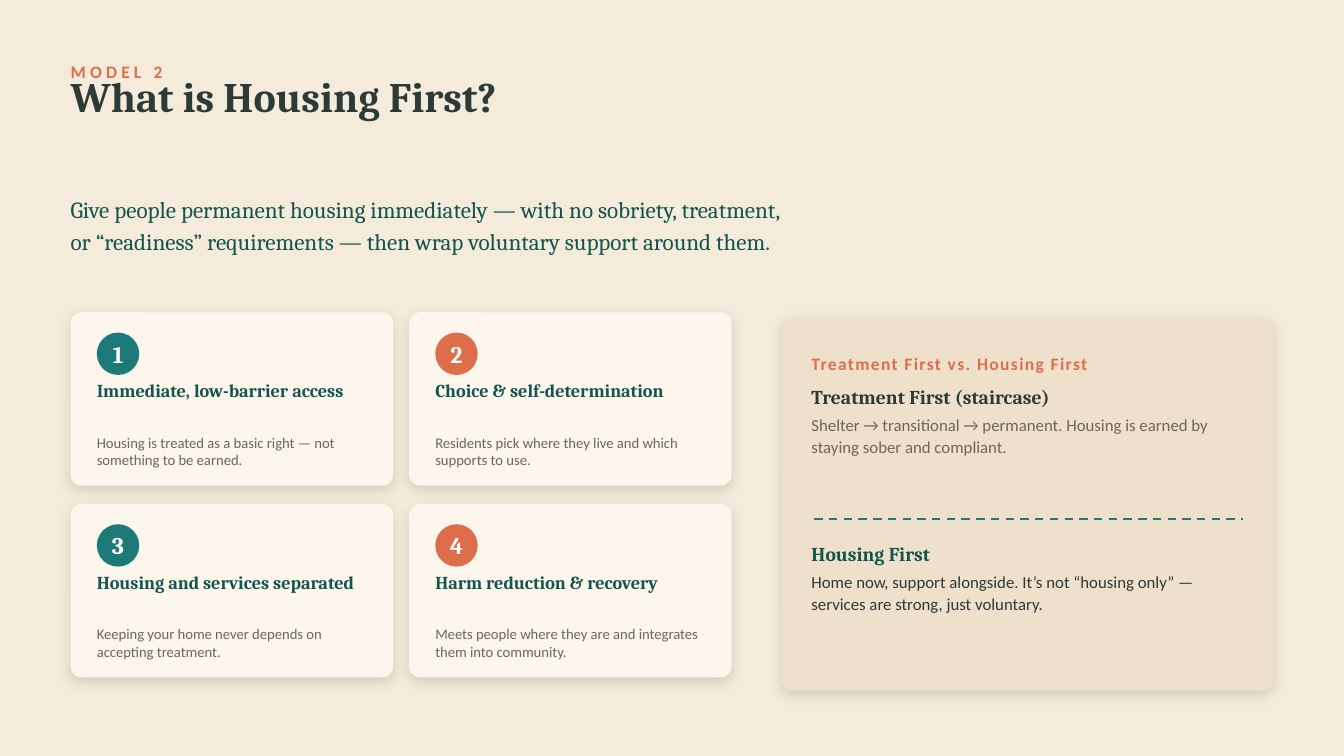
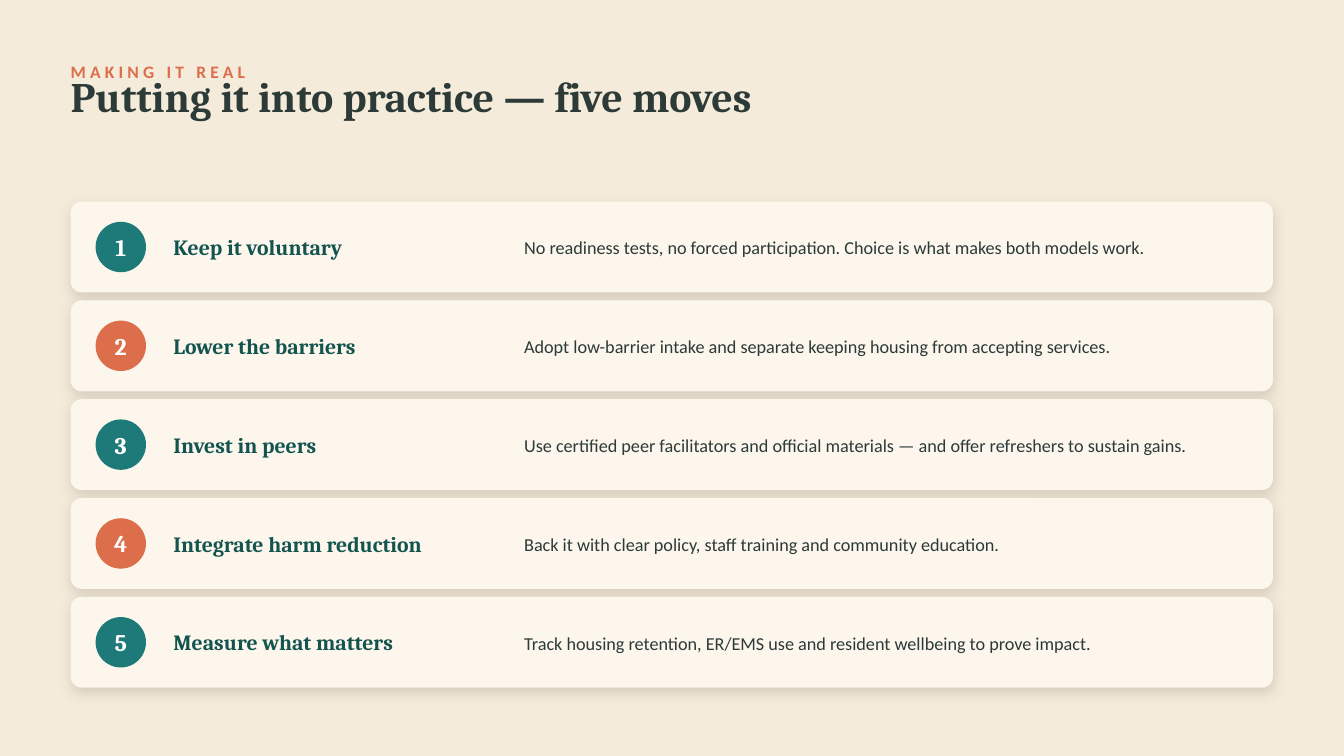
from dataclasses import dataclass

from lxml import etree
from pptx import Presentation
from pptx.dml.color import RGBColor
from pptx.enum.dml import MSO_LINE
from pptx.enum.shapes import MSO_CONNECTOR, MSO_SHAPE
from pptx.enum.text import MSO_ANCHOR, MSO_AUTO_SIZE, PP_ALIGN
from pptx.oxml.ns import qn
from pptx.util import Cm, Pt

TOP, MIDDLE = MSO_ANCHOR.TOP, MSO_ANCHOR.MIDDLE
LEFT, CENTER = PP_ALIGN.LEFT, PP_ALIGN.CENTER
ROUNDED, OVAL = MSO_SHAPE.ROUNDED_RECTANGLE, MSO_SHAPE.OVAL
STRAIGHT, DASH = MSO_CONNECTOR.STRAIGHT, MSO_LINE.DASH
TITLE_ONLY = 5

# Content
MODEL = {
    "eyebrow": "MODEL 2",
    "title": "What is Housing First?",
    "lead": "Give people permanent housing immediately — with no sobriety, treatment, "
            "or “readiness” requirements — then wrap voluntary support around them.",
    "cards": [
        ("Immediate, low-barrier access",
         "Housing is treated as a basic right — not something to be earned."),
        ("Choice & self-determination",
         "Residents pick where they live and which supports to use."),
        ("Housing and services separated",
         "Keeping your home never depends on accepting treatment."),
        ("Harm reduction & recovery",
         "Meets people where they are and integrates them into community."),
    ],
    "comparison": "Treatment First vs. Housing First",
    "staircase": ("Treatment First (staircase)",
                  "Shelter → transitional → permanent. Housing is earned by "
                  "staying sober and compliant."),
    "housing": ("Housing First",
                "Home now, support alongside. It’s not “housing only” — "
                "services are strong, just voluntary."),
}
PRACTICE = {
    "eyebrow": "MAKING IT REAL",
    "title": "Putting it into practice — five moves",
    "moves": [
        ("Keep it voluntary",
         "No readiness tests, no forced participation. Choice is what makes both models work."),
        ("Lower the barriers",
         "Adopt low-barrier intake and separate keeping housing from accepting services."),
        ("Invest in peers",
         "Use certified peer facilitators and official materials — "
         "and offer refreshers to sustain gains."),
        ("Integrate harm reduction",
         "Back it with clear policy, staff training and community education."),
        ("Measure what matters",
         "Track housing retention, ER/EMS use and resident wellbeing to prove impact."),
    ],
}


@dataclass(frozen=True)
class Theme:
    background: str = "F5EBDA"
    card: str = "FCF6EC"
    panel: str = "EFE0CB"
    ink: str = "2C3A38"
    muted: str = "6E655A"
    teal: str = "1E7A78"
    deep_teal: str = "13544F"
    coral: str = "DD6E4C"
    white: str = "FFFFFF"
    serif: str = "Cambria"
    sans: str = "Calibri"
    margin: float = 1.78
    content_width: float = 30.3
    corner: float = 0.28


THEME = Theme()


def style(name, size, color, bold=False, tracking=0, **paragraph):
    """Pair font values with paragraph values under one text style."""
    return {
        "font": {"name": name, "size": Pt(size), "bold": bold},
        "color": color,
        "tracking": tracking,
        "paragraph": {"alignment": LEFT, **paragraph},
    }


STYLES = {
    "eyebrow": style(THEME.sans, 12.5, THEME.coral, True, 3),
    "title": style(THEME.serif, 30, THEME.ink, True),
    "lead": style(THEME.serif, 16.5, THEME.deep_teal, line_spacing=1.15),
    "number": style(THEME.serif, 17, THEME.white, True, alignment=CENTER),
    "card_title": style(THEME.serif, 13, THEME.deep_teal, True, line_spacing=0.95),
    "card_body": style(THEME.sans, 10.5, THEME.muted),
    "panel_label": style(THEME.sans, 12.5, THEME.coral, True, 1),
    "staircase_title": style(THEME.serif, 14, THEME.ink, True,
                             line_spacing=1.1, space_after=Pt(3)),
    "staircase_body": style(THEME.sans, 12, THEME.muted, line_spacing=1.1),
    "housing_title": style(THEME.serif, 14, THEME.deep_teal, True,
                           line_spacing=1.1, space_after=Pt(3)),
    "housing_body": style(THEME.sans, 12, THEME.ink, line_spacing=1.1),
    "move_title": style(THEME.serif, 15.5, THEME.deep_teal, True),
    "move_body": style(THEME.sans, 13, THEME.ink, line_spacing=1.05),
}


# Shared drawing helpers
def set_attributes(target, values):
    for name, value in values.items():
        setattr(target, name, value)


def write(shape, lines, anchor=TOP):
    """Fill a shape with (text, style name) paragraphs."""
    frame = shape.text_frame
    set_attributes(frame, {
        "word_wrap": True, "auto_size": MSO_AUTO_SIZE.NONE, "vertical_anchor": anchor,
        "margin_left": 0, "margin_top": 0, "margin_right": 0, "margin_bottom": 0,
    })
    for index, (text, style_name) in enumerate(lines):
        paragraph = frame.add_paragraph() if index else frame.paragraphs[0]
        values = STYLES[style_name]
        set_attributes(paragraph, values["paragraph"])
        run = paragraph.add_run()
        run.text = text
        set_attributes(run.font, values["font"])
        run.font.color.rgb = RGBColor.from_string(values["color"])
        if values["tracking"]:
            run._r.get_or_add_rPr().set("spc", str(values["tracking"] * 100))


def add_text(slide, box, lines, anchor=TOP):
    write(slide.shapes.add_textbox(*map(Cm, box)), lines, anchor)


def add_filled(slide, kind, box, color):
    shape = slide.shapes.add_shape(kind, *map(Cm, box))
    shape.shadow.inherit = False
    shape.fill.solid()
    shape.fill.fore_color.rgb = RGBColor.from_string(color)
    shape.line.fill.background()
    return shape


def add_card(slide, box, color=THEME.card):
    """Rounded card with a soft shadow falling straight down."""
    card = add_filled(slide, ROUNDED, box, color)
    card.adjustments[0] = THEME.corner / min(box[2:])
    effects = card._element.spPr.find(qn("a:effectLst"))
    shadow = etree.SubElement(effects, qn("a:outerShdw"), {
        "blurRad": str(Pt(9)), "dist": str(Pt(3)), "dir": "5400000",
        "algn": "bl", "rotWithShape": "0",
    })
    color_element = etree.SubElement(shadow, qn("a:srgbClr"), val=THEME.muted)
    etree.SubElement(color_element, qn("a:alpha"), val="22000")


def add_badge(slide, left, top, size, number):
    color = THEME.teal if number % 2 else THEME.coral
    badge = add_filled(slide, OVAL, (left, top, size, size), color)
    write(badge, [(str(number), "number")], MIDDLE)


def add_dashed_line(slide, left, right, y):
    line = slide.shapes.add_connector(STRAIGHT, Cm(left), Cm(y), Cm(right), Cm(y))
    line.line.color.rgb = RGBColor.from_string(THEME.teal)
    set_attributes(line.line, {"width": Pt(1.5), "dash_style": DASH})
    etree.SubElement(line._element.spPr, qn("a:effectLst"))


def add_titled_slide(presentation, content):
    slide = presentation.slides.add_slide(presentation.slide_layouts[TITLE_ONLY])
    add_text(slide, (THEME.margin, 1.4, 20.32, 0.81),
             [(content["eyebrow"], "eyebrow")], MIDDLE)
    title = slide.shapes.title
    set_attributes(title, {"left": Cm(THEME.margin), "top": Cm(1.27),
                           "width": Cm(30.23), "height": Cm(2.29)})
    write(title, [(content["title"], "title")], MIDDLE)
    return slide


# Slides
def build_model(presentation):
    slide = add_titled_slide(presentation, MODEL)
    add_text(slide, (THEME.margin, 4.83, 18.03, 2.67), [(MODEL["lead"], "lead")])

    # Two-by-two grid of principles
    width, height, gap_x, gap_y, inset = 8.13, 4.37, 0.4, 0.46, 0.66
    for index, (heading, body) in enumerate(MODEL["cards"]):
        row, column = divmod(index, 2)
        left = THEME.margin + column * (width + gap_x)
        top = 7.87 + row * (height + gap_y)
        add_card(slide, (left, top, width, height))
        add_badge(slide, left + inset, top + 0.51, 1.07, index + 1)
        add_text(slide, (left + inset, top + 1.73, 6.91, 1.27), [(heading, "card_title")])
        add_text(slide, (left + inset, top + 3.05, 6.91, 1.14), [(body, "card_body")])

    # Comparison panel
    left, width = 20.45, 10.92
    add_card(slide, (19.69, 8, 12.4, 9.4), THEME.panel)
    add_text(slide, (left, 8.64, width, 1.02),
             [(MODEL["comparison"], "panel_label")], MIDDLE)
    for key, top, height in (("staircase", 9.65, 3.05), ("housing", 13.59, 3.3)):
        heading, body = MODEL[key]
        add_text(slide, (left, top, width, height),
                 [(heading, f"{key}_title"), (body, f"{key}_body")])
    add_dashed_line(slide, 20.52, 31.32, 13.08)


def build_practice(presentation):
    slide = add_titled_slide(presentation, PRACTICE)
    height, gap, badge = 2.29, 0.2, 1.27
    for index, (heading, body) in enumerate(PRACTICE["moves"]):
        top = 5.08 + index * (height + gap)
        add_card(slide, (THEME.margin, top, THEME.content_width, height))
        add_badge(slide, 2.41, top + (height - badge) / 2, badge, index + 1)
        add_text(slide, (4.37, top, 8.64, height), [(heading, "move_title")], MIDDLE)
        add_text(slide, (13.21, top, 18.29, height), [(body, "move_body")], MIDDLE)


def main():
    presentation = Presentation()
    set_attributes(presentation, {"slide_width": Cm(33.87), "slide_height": Cm(19.05)})
    background = presentation.slide_master.background.fill
    background.solid()
    background.fore_color.rgb = RGBColor.from_string(THEME.background)
    build_model(presentation)
    build_practice(presentation)
    presentation.save("out.pptx")


if __name__ == "__main__":
    main()
